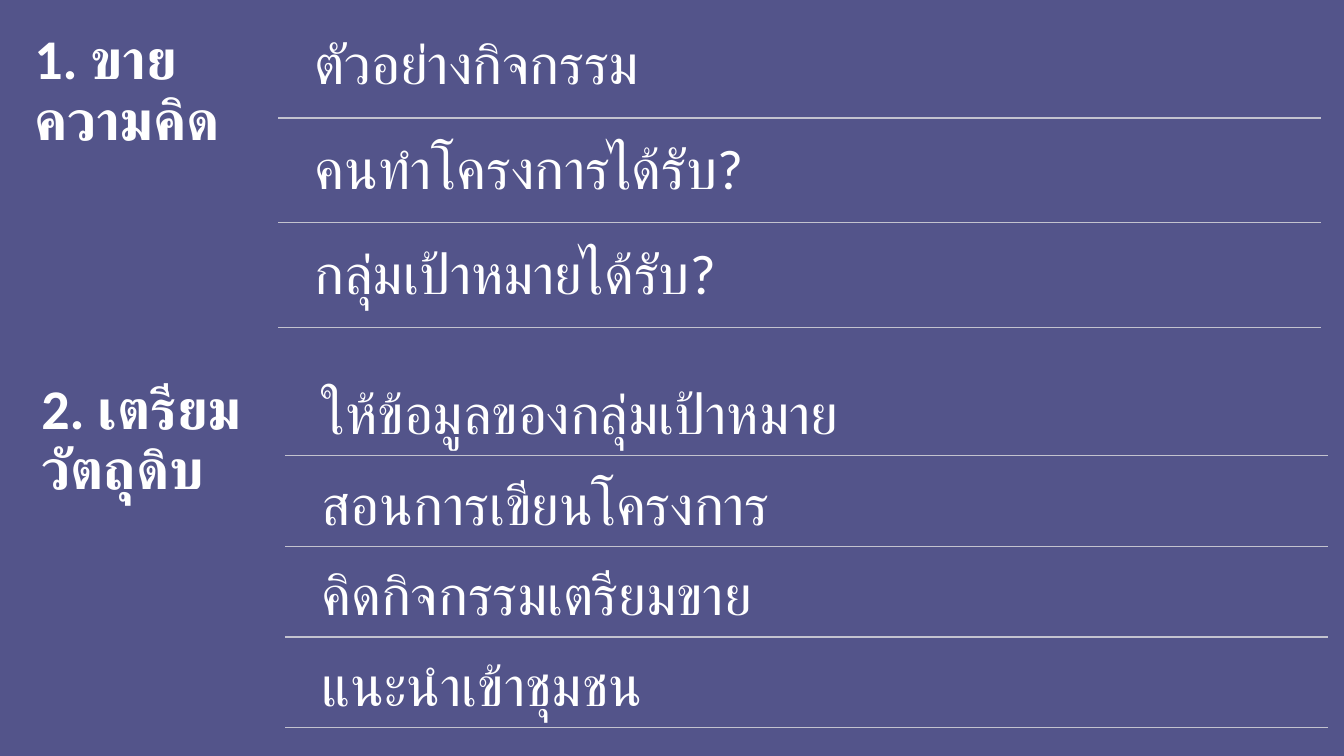
from lxml import etree
from pptx import Presentation
from pptx.dml.color import RGBColor
from pptx.enum import lang, shapes, text
from pptx.oxml import ns
from pptx.util import Inches, Pt

COLORS = {"background": "53548A", "text": "FFFFFF", "rule": "C3C3CF"}
SECTIONS = [
    ("1. ขายความคิด", 0.17, 0.14, 3.15, 1.04, 0.98,
     ["ตัวอย่างกิจกรรม", "คนทำโครงการได้รับ?", "กลุ่มเป้าหมายได้รับ?"]),
    ("2. เตรียมวัตถุดิบ", 0.24, 3.61, 3.65, 0.9, 0.86,
     ["ให้ข้อมูลของกลุ่มเป้าหมาย", "สอนการเขียนโครงการ",
      "คิดกิจกรรมเตรียมขาย", "แนะนำเข้าชุมชน"]),
]


def add_text(group, words, left, top, width, height, bold=False):
    sp = group.shapes.add_textbox(Inches(left), Inches(top), Inches(width), Inches(height))
    tf = sp.text_frame
    tf.word_wrap = True
    tf.auto_size = text.MSO_AUTO_SIZE.NONE
    tf.vertical_anchor = text.MSO_ANCHOR.TOP
    tf.margin_left = tf.margin_right = tf.margin_top = tf.margin_bottom = Inches(0.17)
    p = tf.paragraphs[0]
    p.alignment = text.PP_ALIGN.LEFT
    p.line_spacing = 0.9
    r = p.add_run()
    r.text = words
    r.font.name = "Calibri"
    r.font.size = Pt(40)
    r.font.bold = bold
    r.font.language_id = lang.MSO_LANGUAGE_ID.THAI
    r.font.color.rgb = RGBColor.from_string(COLORS["text"])


def add_rule(group, left, right, y):
    line = group.shapes.add_connector(
        shapes.MSO_CONNECTOR.STRAIGHT, Inches(left), Inches(y), Inches(right), Inches(y))
    line.line.color.rgb = RGBColor.from_string(COLORS["rule"])
    line.line.width = Pt(1)
    etree.SubElement(line._element.spPr, ns.qn("a:effectLst"))


prs = Presentation()
prs.slide_width, prs.slide_height = Inches(13.33), Inches(7.5)
s = prs.slides.add_slide(prs.slide_layouts[6])
s.background.fill.solid()
s.background.fill.fore_color.rgb = RGBColor.from_string(COLORS["background"])

for heading, left, top, height, pitch, row_height, items in SECTIONS:
    group = s.shapes.add_group_shape()
    add_text(group, heading, left, top, 2.59, height, bold=True)
    for i, item in enumerate(items):
        row_top = top + 0.05 + i * pitch
        add_text(group, item, left + 2.78, row_top, 10.15, row_height)
        add_rule(group, left + 2.59, left + 12.93, row_top + row_height)

prs.save("out.pptx")
